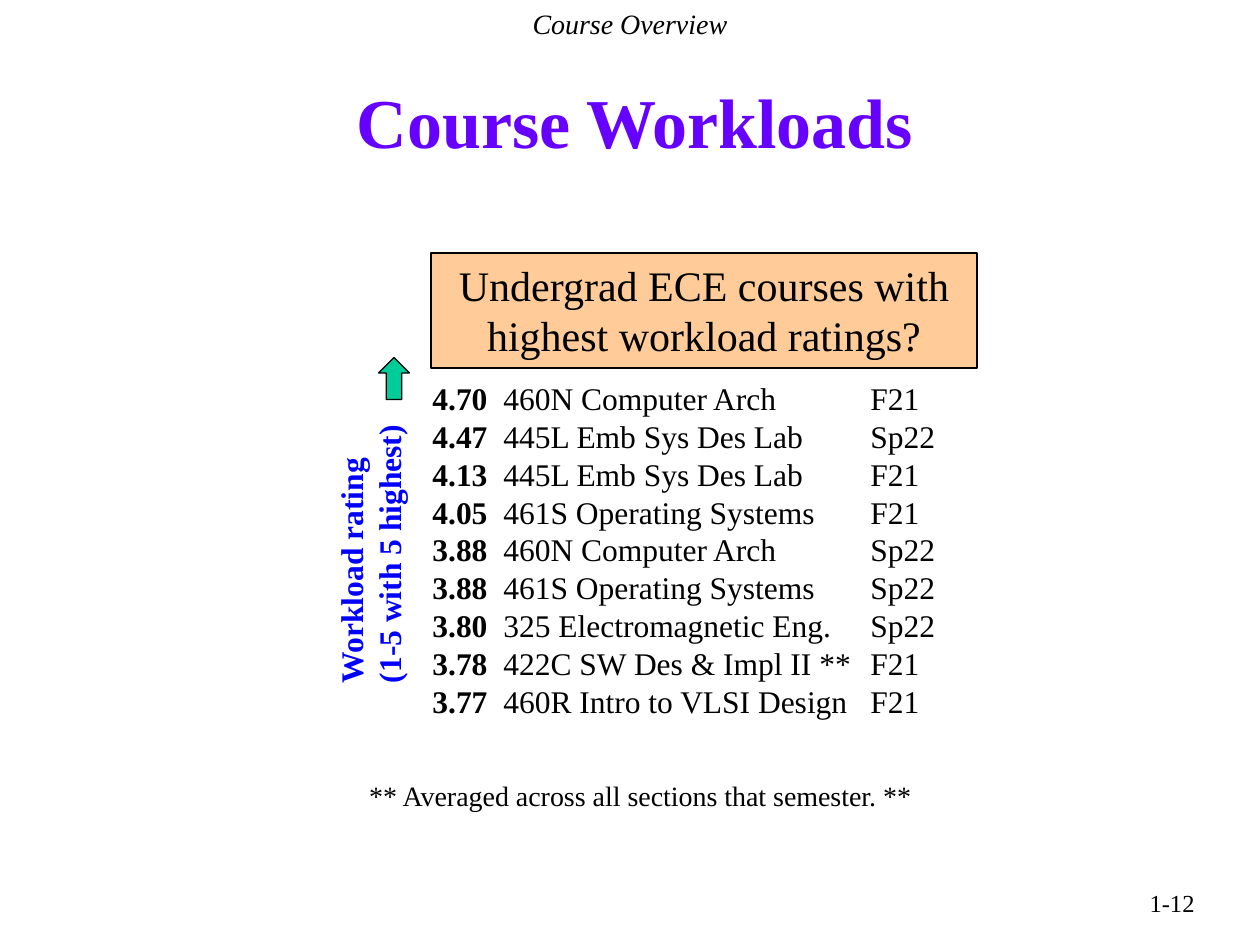
from lxml.etree import SubElement
from pptx import Presentation
from pptx.dml.color import RGBColor
from pptx.enum.shapes import MSO_SHAPE as Shape
from pptx.enum.text import MSO_ANCHOR as Anchor, PP_ALIGN as Align
from pptx.oxml.ns import qn
from pptx.util import Emu, Pt

SCALE = 914400 / 126
FONT = "Times New Roman"
BLACK, BLUE = "000000", "0000FF"
TABS = (71, 438)
COURSES = [
    ("4.70", "460N Computer Arch", "F21"),
    ("4.47", "445L Emb Sys Des Lab", "Sp22"),
    ("4.13", "445L Emb Sys Des Lab", "F21"),
    ("4.05", "461S Operating Systems", "F21"),
    ("3.88", "460N Computer Arch", "Sp22"),
    ("3.88", "461S Operating Systems", "Sp22"),
    ("3.80", "325 Electromagnetic Eng.", "Sp22"),
    ("3.78", "422C SW Des & Impl II **", "F21"),
    ("3.77", "460R Intro to VLSI Design", "F21"),
]


def px(n):
    return Emu(round(n * SCALE))


def rgb(code):
    return RGBColor.from_string(code)


def style(run, size, color=BLACK, bold=False, italic=False):
    font = run.font
    font.name, font.size = FONT, Pt(size)
    font.bold, font.italic = bold, italic
    font.color.rgb = rgb(color)


def write(frame, text, size, align=Align.LEFT, anchor=Anchor.TOP, **look):
    frame.word_wrap = True
    frame.vertical_anchor = anchor
    frame.text = text
    for para in frame.paragraphs:
        para.alignment = align
        for run in para.runs:
            style(run, size, **look)


def label(slide, area, text, size, turn=0, **look):
    box = slide.shapes.add_textbox(*map(px, area))
    box.rotation = turn
    write(box.text_frame, text, size, **look)


def block(slide, kind, area, fill, turn=0):
    shape = slide.shapes.add_shape(kind, *map(px, area))
    shape.shadow.inherit = False
    shape.rotation = turn
    shape.fill.solid()
    shape.fill.fore_color.rgb = rgb(fill)
    shape.line.color.rgb = rgb(BLACK)
    shape.line.width = Pt(0.75)
    return shape


def set_tabs(para):
    stops = SubElement(para._p.get_or_add_pPr(), qn("a:tabLst"))
    for stop in TABS:
        SubElement(stops, qn("a:tab"), pos=str(px(stop)), algn="l")


def ratings(slide, area):
    frame = slide.shapes.add_textbox(*map(px, area)).text_frame
    write(frame, "\n".join(row[0] for row in COURSES), 18, bold=True)
    for para, (_, name, term) in zip(frame.paragraphs, COURSES):
        set_tabs(para)
        run = para.add_run()
        run.text = f"\t{name}\t{term}"
        style(run, 18)


def main():
    deck = Presentation()
    deck.slide_width, deck.slide_height = px(1260), px(945)
    slide = deck.slides.add_slide(deck.slide_layouts[6])
    label(slide, (63, 42, 1144, 157), "Course Workloads", 40,
          align=Align.CENTER, anchor=Anchor.MIDDLE, color="6600FF", bold=True)
    banner = block(slide, Shape.RECTANGLE, (431, 253, 546, 115), "FFCC99")
    write(banner.text_frame,
          "Undergrad ECE courses with highest workload ratings?", 24,
          align=Align.CENTER)
    block(slide, Shape.RIGHT_ARROW, (373, 363, 42, 31), "00CC99", turn=270)
    ratings(slide, (420, 373, 546, 357))
    label(slide, (347, 772, 577, 47),
          "** Averaged across all sections that semester. **", 16,
          align=Align.RIGHT)
    label(slide, (222, 503, 296, 89), "Workload rating\n(1-5 with 5 highest)",
          18, turn=270, color=BLUE, bold=True)
    label(slide, (0, 0, 1260, 47), "Course Overview", 16,
          align=Align.CENTER, italic=True)
    label(slide, (945, 882, 262, 63), "1-12", 14, align=Align.RIGHT)
    deck.save("out.pptx")


if __name__ == "__main__":
    main()
